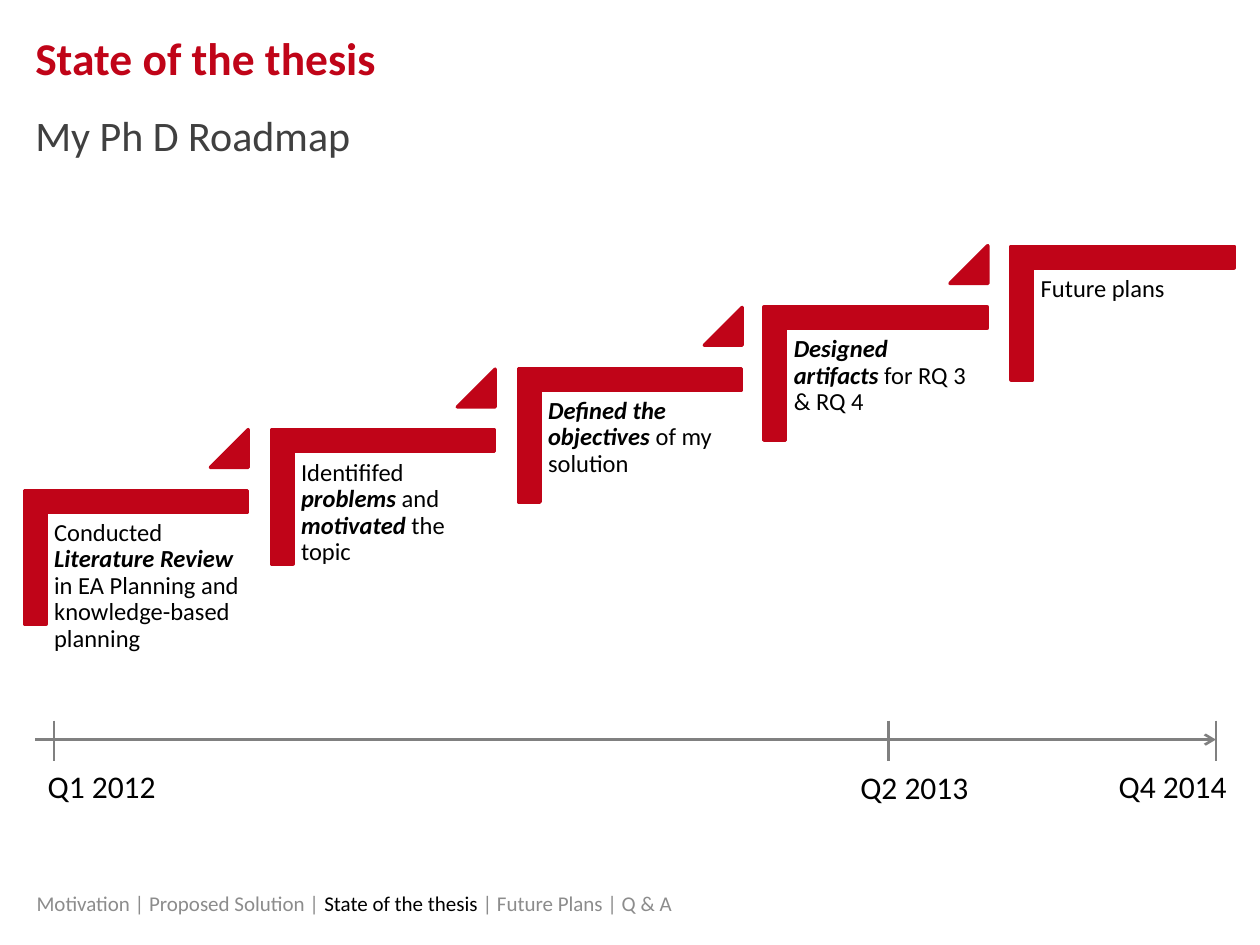
from dataclasses import dataclass
from typing import Optional

from lxml.etree import SubElement
from pptx import Presentation
from pptx.dml.color import RGBColor as RGB
from pptx.enum.shapes import MSO_CONNECTOR as Line, MSO_SHAPE as Shape
from pptx.enum.text import MSO_ANCHOR as Anchor, MSO_AUTO_SIZE as Fit
from pptx.enum.text import PP_ALIGN as Align
from pptx.oxml.ns import qn
from pptx.util import Pt

PX = 9144  # EMU per px, 100 px to the inch
RED = RGB(0xC0, 0x04, 0x18)
DARK = RGB(0x40, 0x40, 0x40)
GREY = RGB(0x80, 0x80, 0x80)
PALE = RGB(0x8C, 0x8C, 0x8C)
BLACK = RGB(0, 0, 0)
FONT = "Calibri"
RISE, RUN = 48.5, 195.75  # px between neighbouring stairs
AXIS = 587


@dataclass
class Part:
    text: str
    color: RGB = BLACK
    bold: bool = False
    slant: bool = False


@dataclass
class Date:
    text: str
    tick: int
    left: int
    top: int = 604


def strong(text: str) -> Part:
    return Part(text, bold=True, slant=True)


BREAK = Part("\n")
STAIRS = [
    [Part("Conducted "), strong("Literature Review "),
     Part("in EA Planning and knowledge-based planning")],
    [Part("Identififed "), strong("problems"), Part(" and "),
     strong("motivated"), Part(" the topic")],
    [strong("Defined the objectives"), Part(" of my solution")],
    [strong("Designed"), BREAK, strong("artifacts "), Part("for RQ 3 & RQ 4")],
    [Part("Future plans")],
]
DATES = [
    Date("Q1 2012", 43, 28),
    Date("Q2 2013", 705, 673, 605),
    Date("Q4 2014", 965, 878),
]
TRAIL = [
    Part("Motivation | Proposed Solution | ", PALE),
    Part("State of the thesis"),
    Part(" | Future Plans | Q & A", PALE),
]


def place(*sizes: int) -> list[int]:
    return [size * PX for size in sizes]


def write(frame, parts: list[Part], size: int, pad: Optional[tuple] = None):
    """Fill a frame's only paragraph; pad is the side and the end inset."""
    frame.word_wrap = True
    frame.auto_size = Fit.NONE
    if pad is not None:
        side, end = place(*pad)
        frame.margin_left = frame.margin_right = side
        frame.margin_top = frame.margin_bottom = end
    para = frame.paragraphs[0]
    para.alignment = Align.LEFT
    for part in parts:
        if part is BREAK:
            para.add_line_break()
            continue
        run = para.add_run()
        run.text = part.text
        font = run.font
        font.name, font.size = FONT, Pt(size)
        font.bold, font.italic = part.bold, part.slant
        font.color.rgb = part.color
    return para


def add_form(shapes, kind: Shape, box: list[int], knobs: list[float]):
    form = shapes.add_shape(kind, *box)
    form.shadow.inherit = False
    for i, knob in enumerate(knobs):
        form.adjustments[i] = knob
    form.fill.solid()
    form.fill.fore_color.rgb = RED
    form.line.color.rgb = RED
    form.line.width = Pt(2)
    return form


def add_stair(shapes, i: int, parts: list[Part], last: bool) -> None:
    x, y = round(i * RUN), -round(i * RISE)
    form = add_form(shapes, Shape.CORNER,
                    place(55 + x, 354 + y, 106, 177), [0.161, 0.161])
    form.rotation = 90
    box = shapes.add_textbox(*place(37 + x, 407 + y, 160, 140))
    write(box.text_frame, parts, 14, (6, 6)).line_spacing = 0.9
    if not last:
        add_form(shapes, Shape.ISOSCELES_TRIANGLE,
                 place(167 + x, 341 + y, 30, 30), [1.0])


def add_line(shapes, ends: list[int], arrow: bool = False) -> None:
    line = shapes.add_connector(Line.STRAIGHT, *ends)
    line.line.color.rgb = GREY
    line.line.width = Pt(1.5)
    props = line._element.spPr
    if arrow:
        SubElement(props.find(qn("a:ln")), qn("a:tailEnd"), type="arrow")
    SubElement(props, qn("a:effectLst"))


def add_date(shapes, date: Date) -> None:
    add_line(shapes, place(date.tick, 572, date.tick, 604))
    box = shapes.add_textbox(*place(date.left, date.top, 110, 40))
    write(box.text_frame, [Part(date.text)], 18)
    box.text_frame.auto_size = Fit.SHAPE_TO_FIT_TEXT


def main() -> None:
    deck = Presentation()
    deck.slide_width, deck.slide_height = place(1000, 750)
    slide = deck.slides.add_slide(deck.slide_layouts[5])
    shapes = slide.shapes

    title = shapes.title
    title.left, title.top, title.width, title.height = place(28, 24, 939, 59)
    write(title.text_frame, [Part("State of the thesis", RED, True)], 26, (0, 0))
    title.text_frame.vertical_anchor = Anchor.TOP

    head = shapes.add_textbox(*place(28, 100, 939, 50))
    para = write(head.text_frame, [Part("My Ph D Roadmap", DARK)], 24, (0, 0))
    para.line_spacing, para.space_after = Pt(19.5), Pt(3)

    foot = shapes.add_textbox(*place(29, 705, 752, 23))
    write(foot.text_frame, TRAIL, 12, (0, 8))
    foot.text_frame.vertical_anchor = Anchor.MIDDLE

    stairs = shapes.add_group_shape().shapes
    for i, parts in enumerate(STAIRS):
        add_stair(stairs, i, parts, i == len(STAIRS) - 1)

    axis = shapes.add_group_shape().shapes
    add_line(axis, place(28, AXIS, 965, AXIS), arrow=True)
    for date in DATES:
        add_date(axis, date)

    deck.save("out.pptx")


if __name__ == "__main__":
    main()
